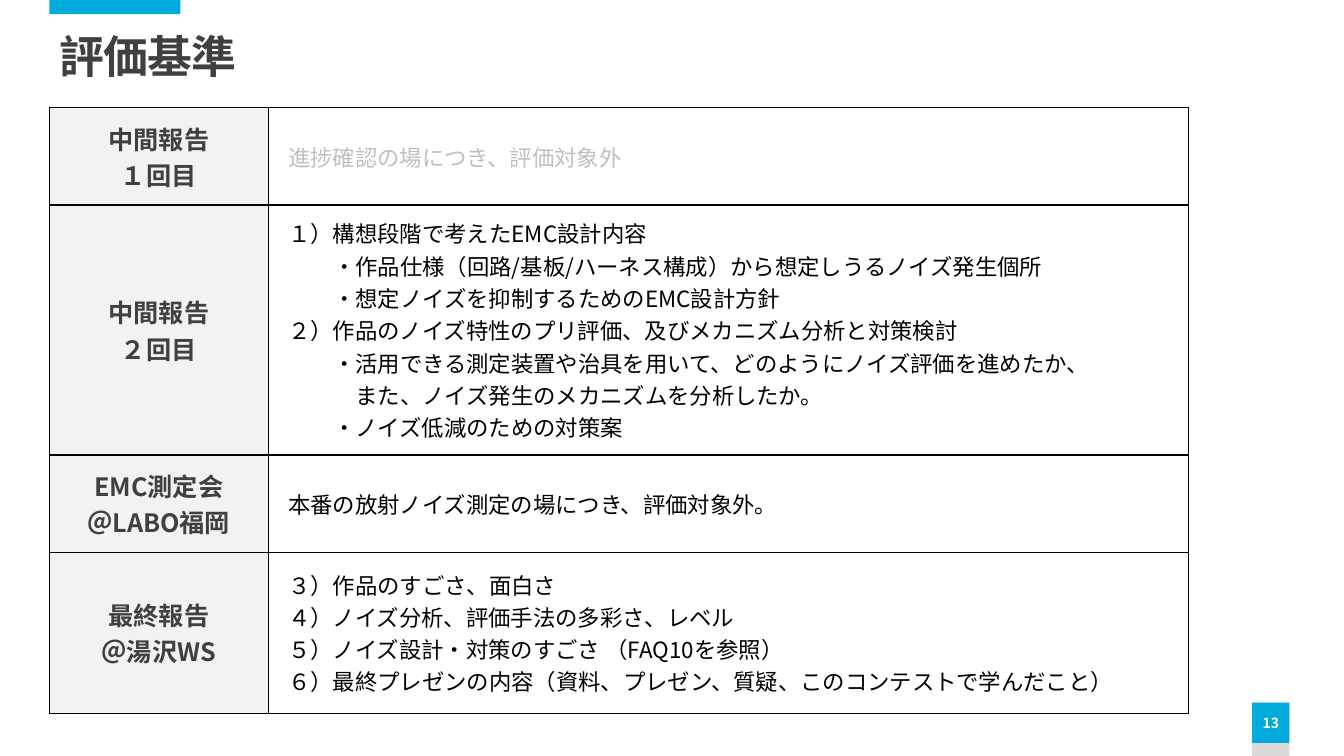
from lxml.etree import SubElement
from pptx import Presentation
from pptx.dml.color import RGBColor
from pptx.enum.shapes import MSO_SHAPE
from pptx.enum.text import MSO_ANCHOR, PP_ALIGN
from pptx.oxml.ns import qn
from pptx.util import Inches, Pt

CYAN = RGBColor(0x00, 0xAA, 0xDC)
GREY = RGBColor(0xD9, 0xD9, 0xD9)
PALE = RGBColor(0xF2, 0xF2, 0xF2)
FADED = RGBColor(0xBF, 0xBF, 0xBF)
DARK = RGBColor(0x40, 0x40, 0x40)
BLACK = RGBColor(0, 0, 0)
WHITE = RGBColor(0xFF, 0xFF, 0xFF)
FONT = "Noto Sans CJK JP"
LEFT = 0.49
TOP = 1.07
COLUMNS = [2.17, 9.13]
BULLET = "・"

# Stage, criteria, row height, criteria colour
STAGES = [
    (["中間報告", "１回目"], ["進捗確認の場につき、評価対象外"], 0.88, FADED),
    (["中間報告", "２回目"], [
        "１）構想段階で考えたEMC設計内容",
        "・作品仕様（回路/基板/ハーネス構成）から想定しうるノイズ発生個所",
        "・想定ノイズを抑制するためのEMC設計方針",
        "２）作品のノイズ特性のプリ評価、及びメカニズム分析と対策検討",
        "・活用できる測定装置や治具を用いて、どのようにノイズ評価を進めたか、\v"
        "また、ノイズ発生のメカニズムを分析したか。",
        "・ノイズ低減のための対策案"], 2.21, BLACK),
    (["EMC測定会", "＠LABO福岡"], ["本番の放射ノイズ測定の場につき、評価対象外。"], 0.88, BLACK),
    (["最終報告", "＠湯沢WS"], [
        "３）作品のすごさ、面白さ",
        "４）ノイズ分析、評価手法の多彩さ、レベル",
        "５）ノイズ設計・対策のすごさ （FAQ10を参照）",
        "６）最終プレゼンの内容（資料、プレゼン、質疑、このコンテストで学んだこと）"],
     1.6, BLACK),
]


def write(frame, lines, size, color, bold, align=PP_ALIGN.LEFT):
    """Fill a text frame, one paragraph a line, with hanging bullet lines."""
    frame.text = "\n".join(lines)
    for paragraph in frame.paragraphs:
        paragraph.alignment = align
        if paragraph.text.startswith(BULLET):
            # Two characters of indent, and one more for the bullet
            paragraph._p.get_or_add_pPr().set("marL", str(Pt(3 * size)))
            paragraph._p.get_or_add_pPr().set("indent", str(-Pt(size)))
        for run in paragraph.runs:
            look = {"size": Pt(size), "bold": bold, "name": FONT}
            for key, value in look.items():
                setattr(run.font, key, value)
            run.font.color.rgb = color
            SubElement(run._r.get_or_add_rPr(), qn("a:ea"), typeface=FONT)


def add_block(left, top, width, height, color):
    block = slide.shapes.add_shape(MSO_SHAPE.RECTANGLE, Inches(left), Inches(top),
                                   Inches(width), Inches(height))
    block.shadow.inherit = False
    block.fill.solid()
    block.fill.fore_color.rgb = color
    block.line.fill.background()
    return block


deck = Presentation()
deck.slide_width, deck.slide_height = Inches(13.33), Inches(7.5)
slide = deck.slides.add_slide(deck.slide_layouts[5])

# Accent bar and page number
add_block(12.42, 6.97, 0.37, 0.53, GREY)
page_number = add_block(12.42, 6.97, 0.37, 0.4, CYAN).text_frame
add_block(LEFT, 0, 1.3, 0.14, CYAN)
page_layout = {"margin_left": 0, "margin_right": 0, "margin_top": 0, "margin_bottom": 0,
               "word_wrap": False, "vertical_anchor": MSO_ANCHOR.MIDDLE}
for key, value in page_layout.items():
    setattr(page_number, key, value)
write(page_number, ["13"], 10, WHITE, True, PP_ALIGN.CENTER)

# Title
title = slide.shapes.title
place = {"left": LEFT, "top": 0.26, "width": 12.22, "height": 0.65}
for key, value in place.items():
    setattr(title, key, Inches(value))
title.text_frame.vertical_anchor = MSO_ANCHOR.MIDDLE
write(title.text_frame, ["評価基準"], 32, DARK, True)
heading = title.text_frame.paragraphs[0]
heading.line_spacing = 0.9
heading.runs[0]._r.get_or_add_rPr().set("spc", "-60")

# Criteria table
criteria = slide.shapes.add_table(
    len(STAGES), len(COLUMNS), Inches(LEFT), Inches(TOP), Inches(sum(COLUMNS)),
    Inches(sum(stage[2] for stage in STAGES))).table
criteria.first_row = criteria.horz_banding = False
for column, width in zip(criteria.columns, COLUMNS):
    column.width = Inches(width)
for row, (stage, points, height, color) in zip(criteria.rows, STAGES):
    row.height = Inches(height)
    stage_cell, points_cell = row.cells
    write(stage_cell.text_frame, stage, 18, DARK, True, PP_ALIGN.CENTER)
    write(points_cell.text_frame, points, 16, color, False)
    for cell, fill in ((stage_cell, PALE), (points_cell, WHITE)):
        cell.vertical_anchor = MSO_ANCHOR.MIDDLE
        cell.margin_left = cell.margin_right = Inches(0.2)
        cell.margin_top = cell.margin_bottom = Inches(0.12)
        for side in ("lnL", "lnR", "lnT", "lnB"):
            border = SubElement(cell._tc.get_or_add_tcPr(), qn(f"a:{side}"), w=str(Pt(1)))
            ink = SubElement(border, qn("a:solidFill"))
            SubElement(ink, qn("a:srgbClr"), val=str(BLACK))
        cell.fill.solid()
        cell.fill.fore_color.rgb = fill

deck.save("out.pptx")
